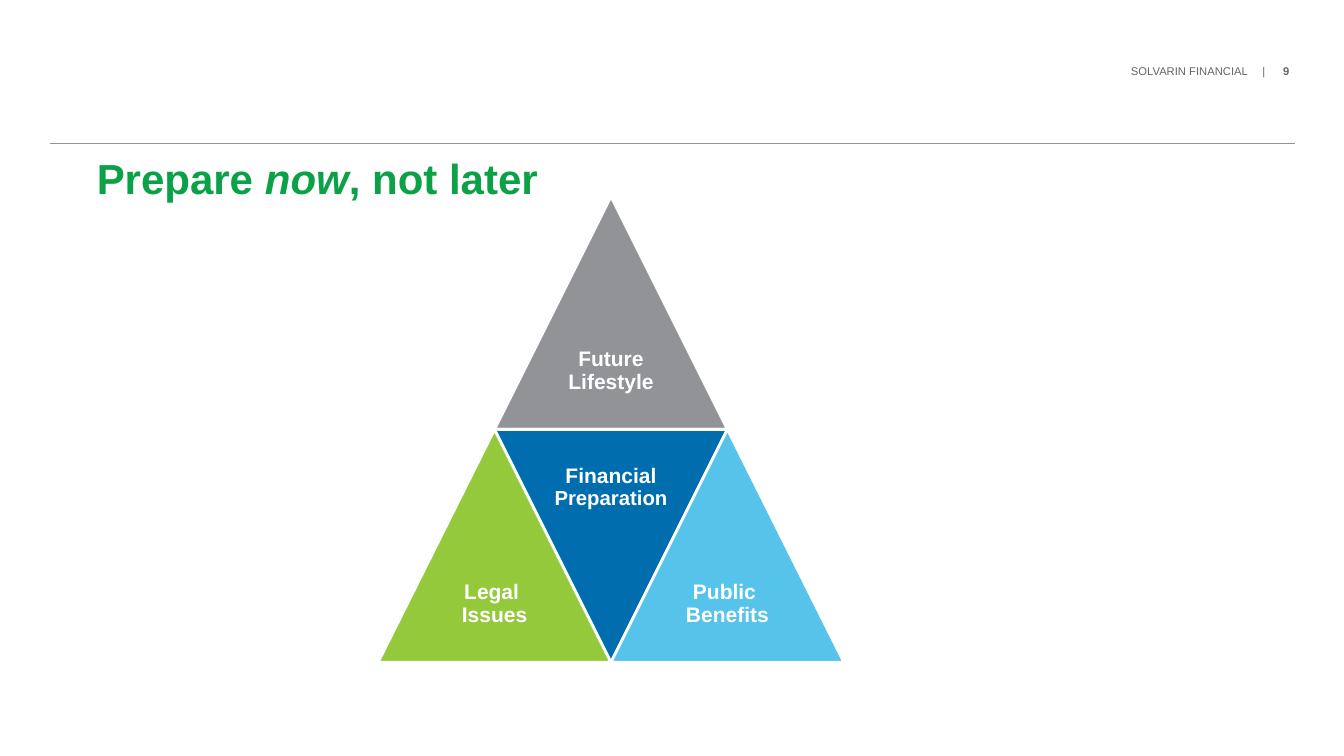
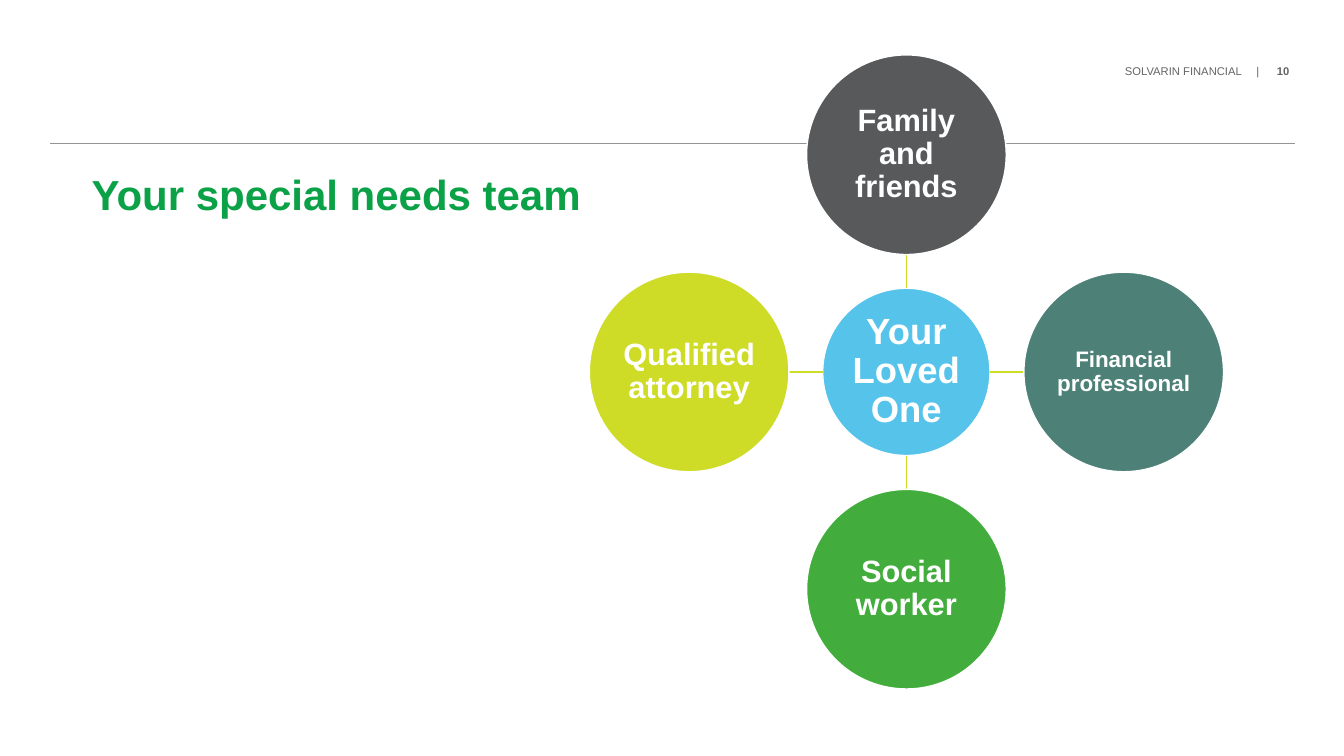
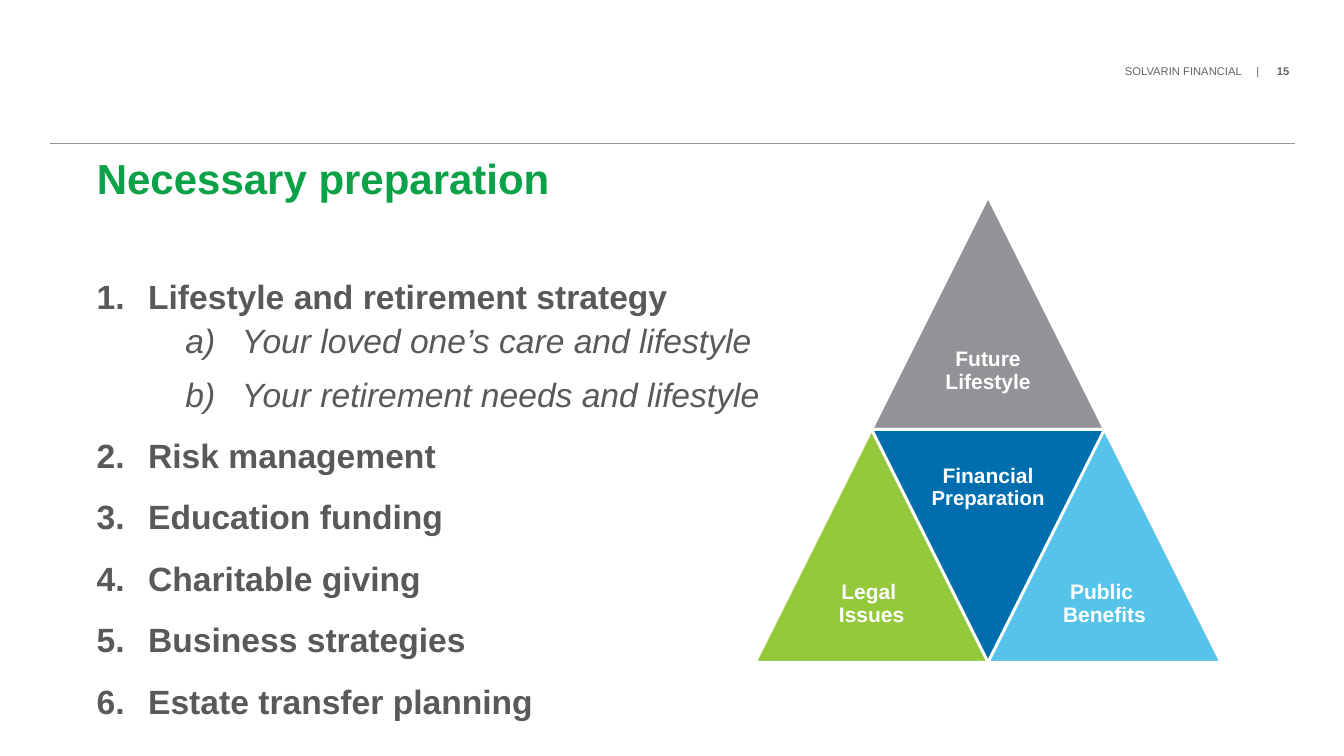
"""Builds three slides on planning ahead for a loved one with special needs."""
from pptx import Presentation
from pptx.dml.color import RGBColor
from pptx.enum.shapes import MSO_CONNECTOR, MSO_SHAPE
from pptx.enum.text import MSO_ANCHOR, MSO_AUTO_SIZE, PP_ALIGN
from pptx.oxml.ns import qn
from pptx.util import Inches, Pt

STRAIGHT = MSO_CONNECTOR.STRAIGHT
TRIANGLE, INVERTED, OVAL = MSO_SHAPE.ISOSCELES_TRIANGLE, MSO_SHAPE.FLOWCHART_MERGE, MSO_SHAPE.OVAL
TOP, MIDDLE = MSO_ANCHOR.TOP, MSO_ANCHOR.MIDDLE
LEFT, CENTER = PP_ALIGN.LEFT, PP_ALIGN.CENTER
NO_FIT = MSO_AUTO_SIZE.NONE

FONT = "Arial"
COLORS = {
    "title": "0AA147", "footer": "636466", "rule": "929497", "body": "58595B",
    "white": "FFFFFF", "gray": "929397", "lime": "95C93C", "blue": "006DAF",
    "sky": "56C3EA", "charcoal": "58595B", "teal": "4D8177", "green": "42AD3C",
    "yellow": "CEDC27",
}
COMPANY = "SOLVARIN FINANCIAL"

PYRAMID = [
    (TRIANGLE, 0.5, 0, "gray", [("Future", 15), ("Lifestyle", 15)]),
    (TRIANGLE, 0, 1, "lime", [("Legal ", 15), ("Issues", 15)]),
    (INVERTED, 0.5, 1, "blue", [("Financial", 15), ("Preparation", 14.5)]),
    (TRIANGLE, 1, 1, "sky", [("Public ", 15), ("Benefits", 15)]),
]
LOVED_ONE = [("Your", 26), ("Loved One", 26)]
TEAM = [
    (0, -1, "charcoal", "Family and friends", 22),
    (1, 0, "teal", "Financial professional", 16),
    (0, 1, "green", "Social worker", 22),
    (-1, 0, "yellow", "Qualified attorney", 22),
]
STEPS = [
    (0, "Lifestyle and retirement strategy", 0),
    (1, "Your loved one’s care and lifestyle", 6),
    (1, "Your retirement needs and lifestyle", 12),
    (0, "Risk management", 12),
    (0, "Education funding", 12),
    (0, "Charitable giving", 12),
    (0, "Business strategies", 12),
    (0, "Estate transfer planning", 0),
]
STEP_LEVELS = [(0.51, 0.51, "arabicPeriod"), (1.44, 0.56, "alphaLcParenR")]


def rgb(name):
    return RGBColor.from_string(COLORS[name])


def add_run(p, text, size, color, bold=False, italic=False):
    r = p.add_run()
    r.text = text
    r.font.name, r.font.size = FONT, Pt(size)
    r.font.bold, r.font.italic = bold, italic
    r.font.color.rgb = rgb(color)


def set_frame(tf, anchor, inset=0):
    tf.word_wrap, tf.auto_size, tf.vertical_anchor = True, NO_FIT, anchor
    tf.margin_left = tf.margin_right = tf.margin_top = tf.margin_bottom = Inches(inset)


def add_line(s, x1, y1, x2, y2, color, width):
    line = s.shapes.add_connector(STRAIGHT, Inches(x1), Inches(y1), Inches(x2), Inches(y2))
    line.line.color.rgb, line.line.width = rgb(color), Pt(width)
    sp_pr = line._element.spPr
    sp_pr.append(sp_pr.makeelement(qn("a:effectLst"), {}))


def add_label_shape(s, kind, x, y, size, fill, border, lines, inset=0):
    sp = s.shapes.add_shape(kind, Inches(x), Inches(y), Inches(size), Inches(size))
    sp.shadow.inherit = False
    sp.fill.solid()
    sp.fill.fore_color.rgb = rgb(fill)
    sp.line.color.rgb, sp.line.width = rgb("white"), Pt(border)
    tf = sp.text_frame
    set_frame(tf, MIDDLE, inset)
    for i, (text, points) in enumerate(lines):
        p = tf.add_paragraph() if i else tf.paragraphs[0]
        p.alignment, p.line_spacing = CENTER, 0.9
        add_run(p, text, points, "white", bold=True)


def add_footer(s, number):
    tf = s.shapes.add_textbox(Inches(10.53), Inches(0.64), Inches(2.3), Inches(0.15)).text_frame
    set_frame(tf, TOP)
    p = tf.paragraphs[0]
    shift = 0.06 * (len(number) - 1)
    p_pr = p._p.get_or_add_pPr()
    tabs = p_pr.makeelement(qn("a:tabLst"), {})
    p_pr.append(tabs)
    for stop in (1.85 - shift, 2.02 - shift, 2.26):
        tabs.append(tabs.makeelement(qn("a:tab"), {"pos": str(Inches(stop)), "algn": "r"}))
    add_run(p, f"\t{COMPANY}\t|\t", 8, "footer")
    add_run(p, number, 8, "footer", bold=True)


def new_slide(prs, number, title, box):
    s = prs.slides.add_slide(prs.slide_layouts[5])
    sp = s.shapes.title
    sp.left, sp.top, sp.width, sp.height = (Inches(v) for v in box)
    set_frame(sp.text_frame, TOP)
    p = sp.text_frame.paragraphs[0]
    p.alignment, p.line_spacing = LEFT, Pt(31)
    for text, italic in title:
        add_run(p, text, 30, "title", bold=True, italic=italic)
    add_footer(s, number)
    add_line(s, 0.5, 1.42, 12.84, 1.42, "rule", 0.5)
    return s


def add_pyramid(s, left, top=1.95, size=2.31):
    for kind, col, row, fill, lines in PYRAMID:
        add_label_shape(s, kind, left + col * size, top + row * size, size, fill, 2, lines)


def add_team(s, cx=8.99, cy=3.69, hub=1.66, member=1.98, reach=2.155):
    add_label_shape(s, OVAL, cx - hub / 2, cy - hub / 2, hub, "sky", 1, LOVED_ONE, 0.02)
    near, far = hub / 2, reach - member / 2
    for dx, dy, fill, text, points in TEAM:
        add_line(s, cx + dx * near, cy + dy * near, cx + dx * far, cy + dy * far, "yellow", 1)
        add_label_shape(s, OVAL, cx + dx * reach - member / 2, cy + dy * reach - member / 2,
                        member, fill, 1, [(text, points)], 0.02)


def add_steps(s):
    tf = s.shapes.add_textbox(Inches(0.96), Inches(2.78), Inches(7), Inches(4.4)).text_frame
    set_frame(tf, TOP)
    for i, (level, text, after) in enumerate(STEPS):
        p = tf.add_paragraph() if i else tf.paragraphs[0]
        margin, hang, scheme = STEP_LEVELS[level]
        p.level, p.line_spacing = level, 0.9
        p.space_before, p.space_after = Pt(6 if i else 0), Pt(after)
        p_pr = p._p.get_or_add_pPr()
        p_pr.set("marL", str(Inches(margin)))
        p_pr.set("indent", str(-Inches(hang)))
        p_pr.append(p_pr.makeelement(qn("a:buFont"), {"typeface": FONT}))
        p_pr.append(p_pr.makeelement(qn("a:buAutoNum"), {"type": scheme}))
        add_run(p, text, 24, "body", bold=level == 0, italic=level == 1)


def main():
    prs = Presentation()
    prs.slide_width, prs.slide_height = Inches(13.33), Inches(7.5)
    wide_title = (0.96, 1.58, 11.33, 1.05)

    s = new_slide(prs, "9", [("Prepare ", False), ("now", True), (", not later", False)], wide_title)
    add_pyramid(s, 3.75)

    s = new_slide(prs, "10", [("Your special needs team", False)], (0.91, 1.74, 5.57, 0.74))
    add_team(s)

    s = new_slide(prs, "15", [("Necessary preparation", False)], wide_title)
    add_steps(s)
    add_pyramid(s, 7.49)

    prs.save("out.pptx")


if __name__ == "__main__":
    main()
